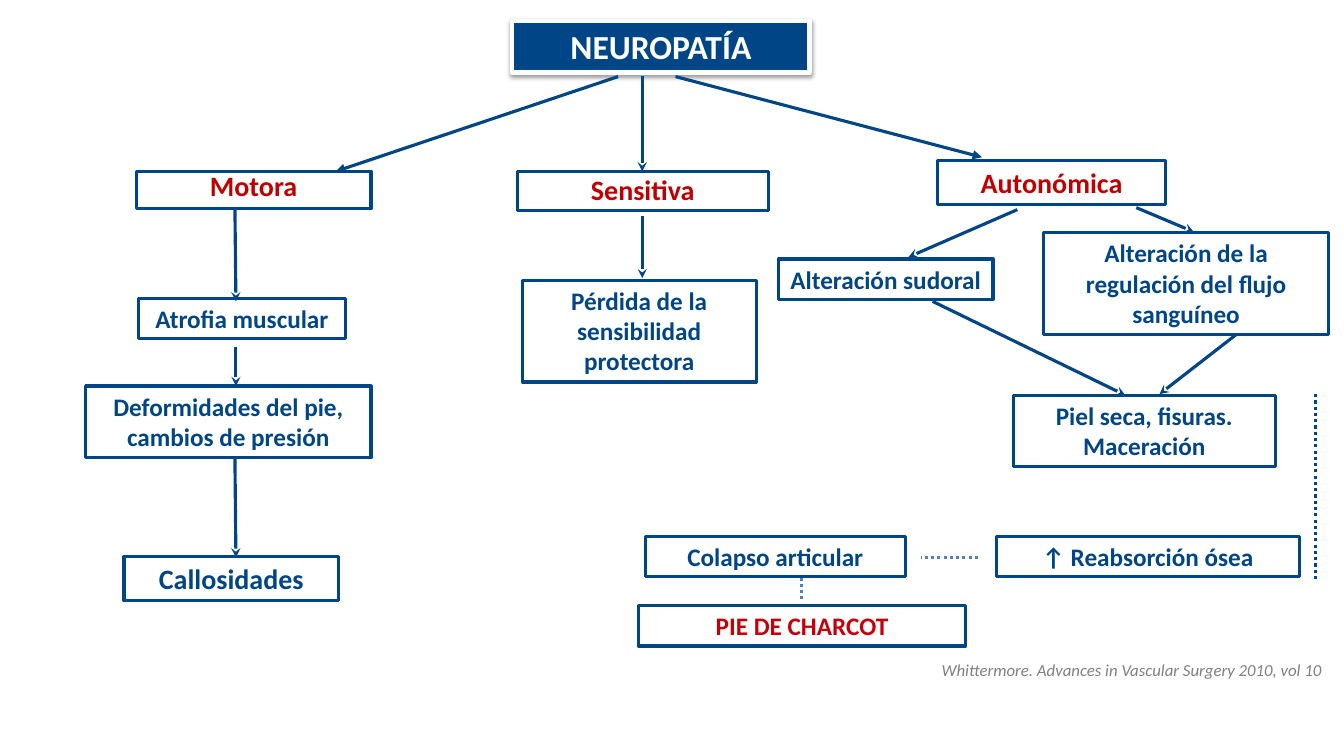
from lxml import etree
from pptx import Presentation
from pptx.dml.color import RGBColor
from pptx.enum.dml import MSO_LINE
from pptx.enum.shapes import MSO_CONNECTOR, MSO_SHAPE
from pptx.enum.text import MSO_ANCHOR, MSO_AUTO_SIZE, PP_ALIGN
from pptx.oxml.ns import qn
from pptx.util import Pt

PX = 9144  # 100 px to the inch
RECT = MSO_SHAPE.RECTANGLE
LINE = MSO_CONNECTOR.STRAIGHT
DOTS = MSO_LINE.ROUND_DOT
TOP, MID = MSO_ANCHOR.TOP, MSO_ANCHOR.MIDDLE
GROW = MSO_AUTO_SIZE.SHAPE_TO_FIT_TEXT
MIDDLE, RIGHT = PP_ALIGN.CENTER, PP_ALIGN.RIGHT

THEME = {
    "navy": RGBColor.from_string("004586"),
    "red": RGBColor.from_string("C00000"),
    "alert": RGBColor.from_string("C5000B"),
    "blue": RGBColor.from_string("4F81BD"),
    "gray": RGBColor.from_string("808080"),
    "white": RGBColor.from_string("FFFFFF"),
    "face": "Calibri",
    "title": Pt(24), "head": Pt(20), "body": Pt(18), "cite": Pt(12),
    "rule": Pt(2.25), "frame": Pt(3),
}


def write(shape, text, size, color, align=MIDDLE, space=None, italic=False, **frame):
    box = shape.text_frame
    base = {"word_wrap": True, "margin_left": 10 * PX, "margin_right": 10 * PX,
            "margin_top": 5 * PX, "margin_bottom": 5 * PX, "vertical_anchor": TOP}
    for name, value in (base | frame).items():
        setattr(box, name, value)
    box.text = text
    font = {"name": THEME["face"], "size": THEME[size], "bold": not italic, "italic": italic}
    for par in box.paragraphs:
        par.alignment = align
        par.line_spacing = space
        for name, value in font.items():
            setattr(par.font, name, value)
        par.font.color.rgb = THEME[color]


def link(ends, color="navy", head=None):
    line = slide.shapes.add_connector(LINE, *[n * PX for n in ends])
    line.line.color.rgb = THEME[color]
    line.line.width = THEME["rule"]
    if head:
        etree.SubElement(line.line._get_or_add_ln(), qn("a:tailEnd"), type=head)
    else:
        line.line.dash_style = DOTS
    etree.SubElement(line._element.spPr, qn("a:effectLst"))


deck = Presentation()
deck.slide_width, deck.slide_height = 1333 * PX, 750 * PX
slide = deck.slides.add_slide(deck.slide_layouts[6])

# Title box with a soft shadow
title = slide.shapes.add_shape(RECT, 508 * PX, 21 * PX, 295 * PX, 51 * PX)
title.fill.solid()
title.fill.fore_color.rgb = THEME["navy"]
title.line.color.rgb = THEME["white"]
title.line.width = THEME["frame"]
title.shadow.inherit = False
glow = etree.SubElement(title._element.spPr.find(qn("a:effectLst")), qn("a:outerShdw"),
                        blurRad=str(Pt(3.1)), dist=str(Pt(1.6)), dir="5400000", rotWithShape="0")
tint = etree.SubElement(glow, qn("a:srgbClr"), val="000000")
etree.SubElement(tint, qn("a:alpha"), val="38000")
write(title, "NEUROPATÍA", "title", "white", auto_size=GROW)

# Outlined boxes: place, text, size, colour, text format
tight = {"space": 0.7}
boxes = [
    ((135, 170, 233, 37), "Motora", "head", "red", tight | {"margin_top": 6 * PX}),
    ((513, 170, 249, 39), "Sensitiva", "head", "red",
     tight | {"margin_top": 9 * PX, "vertical_anchor": MID}),
    ((930, 159, 226, 44), "Autonómica", "head", "red", {}),
    ((137, 296, 206, 40), "Atrofia muscular", "body", "navy", {}),
    ((85, 383, 283, 71), "Deformidades del pie, cambios de presión", "body", "navy", {}),
    ((123, 552, 213, 44), "Callosidades", "head", "navy", {}),
    ((518, 278, 232, 101), "Pérdida de la sensibilidad protectora", "body", "navy", {}),
    ((772, 257, 213, 40), "Alteración sudoral", "body", "navy", {}),
    ((1035, 231, 283, 101), "Alteración de la regulación del flujo sanguíneo",
     "body", "navy", {}),
    ((1005, 392, 260, 71), "Piel seca, fisuras.\nMaceración", "body", "navy", {}),
    ((988, 532, 301, 40), "↑ Reabsorción ósea", "body", "navy", {"vertical_anchor": MID}),
    ((640, 532, 258, 40), "Colapso articular", "body", "navy", {}),
    ((633, 601, 325, 40), "PIE DE CHARCOT", "body", "alert", {"vertical_anchor": MID}),
]
for place, text, size, color, form in boxes:
    box = slide.shapes.add_shape(RECT, *[n * PX for n in place])
    box.fill.background()
    box.line.color.rgb = THEME["navy"]
    box.line.width = THEME["rule"]
    box.shadow.inherit = False
    write(box, text, size, color, auto_size=GROW, **form)

# Arrows from the title to the outer branches
for ends in [(613, 76, 333, 170), (670, 76, 974, 156)]:
    link(ends, head="triangle")

# Arrows down each branch
steps = [
    (637, 75, 637, 170), (637, 214, 637, 276),
    (233, 206, 234, 299), (234, 344, 234, 383), (233, 454, 234, 553),
    (1009, 208, 901, 255), (1127, 206, 1184, 230),
    (925, 299, 1116, 392), (1226, 332, 1150, 391),
]
for ends in steps:
    link(ends, head="stealth")

# Dotted links towards the Charcot foot
link((795, 573, 795, 594), "blue")
link((970, 553, 913, 553), "blue")
link((1305, 391, 1305, 577))

# Citation
cite = slide.shapes.add_textbox(54 * PX, 650 * PX, 1267 * PX, 32 * PX)
write(cite, "Whittermore. Advances in Vascular Surgery 2010, vol 10", "cite", "gray",
      align=RIGHT, italic=True)

deck.save("out.pptx")
